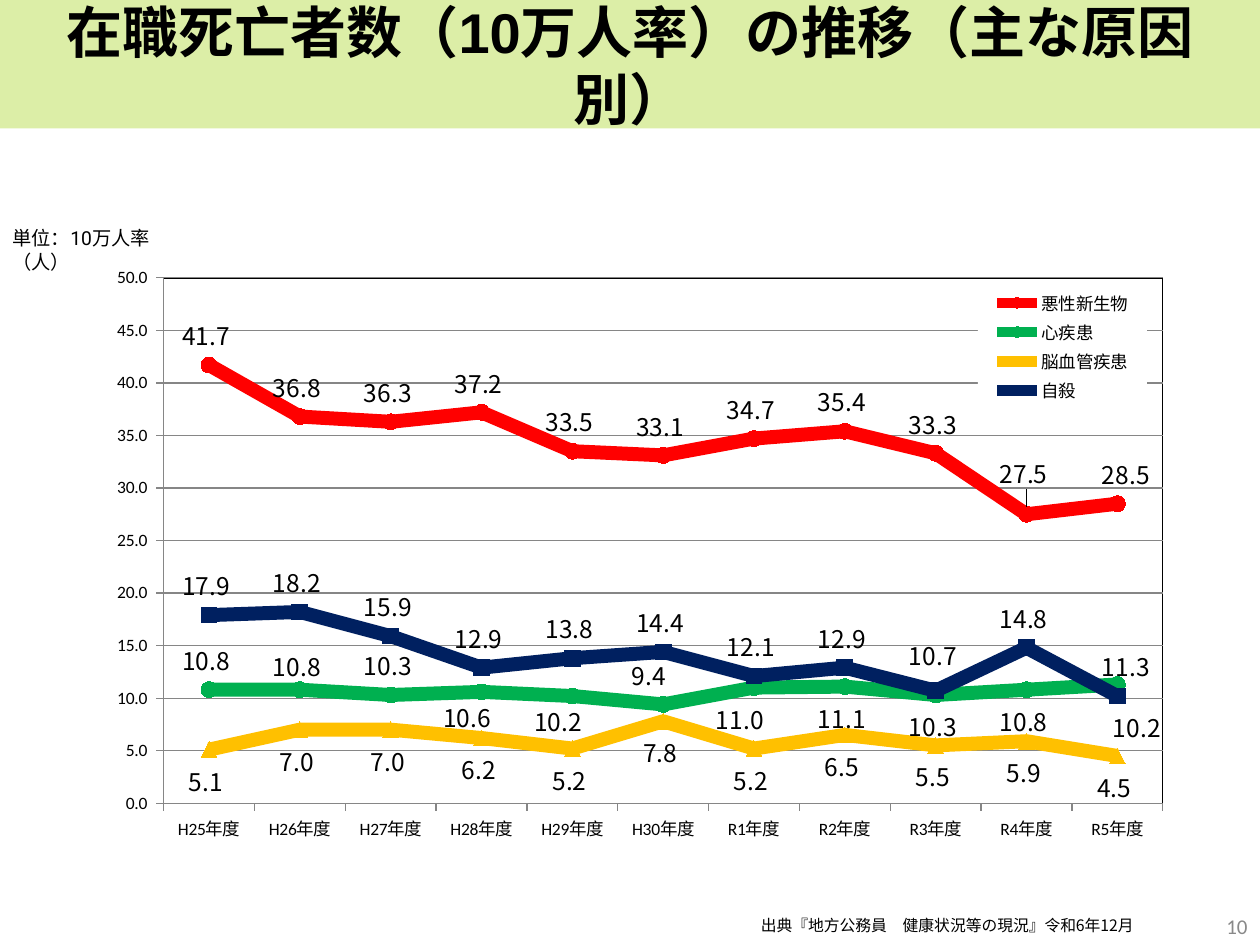
import pptx
import pptx.chart.data
import pptx.dml.color
import pptx.enum.chart
import pptx.enum.shapes
import pptx.enum.text
import pptx.oxml
import pptx.oxml.ns
import pptx.util

POSITION = pptx.enum.chart.XL_LABEL_POSITION
MARKER = pptx.enum.chart.XL_MARKER_STYLE
ALIGN = pptx.enum.text.PP_ALIGN
ANCHOR = pptx.enum.text.MSO_ANCHOR
ABOVE, BELOW = POSITION.ABOVE, POSITION.BELOW
NAMESPACES = pptx.oxml.ns.nsdecls("c", "a")

# Content
TITLE = "在職死亡者数（10万人率）の推移（主な原因別）"
UNIT = "単位：10万人率（人）"
SOURCE = "出典『地方公務員　健康状況等の現況』令和6年12月"
PAGE = "10"
YEARS = [f"H{year}年度" for year in range(25, 31)] + [f"R{year}年度" for year in range(1, 6)]
NUMBER_FORMAT = r"0.0_);[Red]\(0.0\)"
LABEL_FONT = "Noto Sans CJK JP"
GREY = "868686"

# Moved labels: point -> (position, shift x, shift y) as shares of the chart
SERIES = [
    {"name": "悪性新生物", "color": "FF0000", "marker": MARKER.CIRCLE, "position": ABOVE,
     "values": [41.7, 36.8, 36.3, 37.2, 33.5, 33.1, 34.7, 35.4, 33.3, 27.5, 28.5],
     "moved": {9: (ABOVE, 0, -0.02), 10: (ABOVE, 0.01, 0)}},
    {"name": "心疾患", "color": "00B050", "marker": MARKER.CIRCLE, "position": BELOW,
     "values": [10.8, 10.8, 10.3, 10.6, 10.2, 9.4, 11.0, 11.1, 10.3, 10.8, 11.3],
     "moved": {0: (ABOVE, 0, 0), 1: (ABOVE, 0, 0.01), 2: (ABOVE, 0, 0),
               3: (BELOW, -0.01, -0.01), 4: (BELOW, -0.01, -0.01), 5: (ABOVE, -0.01, 0),
               6: (BELOW, -0.01, 0), 7: (BELOW, 0, 0), 10: (ABOVE, 0.01, 0.02)}},
    {"name": "脳血管疾患", "color": "FFC000", "marker": MARKER.TRIANGLE, "position": BELOW,
     "values": [5.1, 7.0, 7.0, 6.2, 5.2, 7.8, 5.2, 6.5, 5.5, 5.9, 4.5], "moved": {}},
    {"name": "自殺", "color": "002060", "marker": MARKER.SQUARE, "position": ABOVE,
     "values": [17.9, 18.2, 15.9, 12.9, 13.8, 14.4, 12.1, 12.9, 10.7, 14.8, 10.2],
     "moved": {8: (ABOVE, 0, -0.01), 10: (BELOW, 0.02, 0)}},
]


def color(value):
    return pptx.dml.color.RGBColor.from_string(value)


def set_font(font, name, size, value="000000"):
    font.name = name
    font.size = pptx.util.Pt(size)
    font.color.rgb = color(value)


def set_line(line, value, width):
    line.color.rgb = color(value)
    line.width = pptx.util.Pt(width)


def write(shape, text, name, size, value="000000", align=ALIGN.LEFT, anchor=ANCHOR.MIDDLE, bold=False):
    frame = shape.text_frame
    frame.word_wrap = True
    frame.vertical_anchor = anchor
    paragraph = frame.paragraphs[0]
    paragraph.alignment = align
    run = paragraph.add_run()
    run.text = text
    set_font(run.font, name, size, value)
    run.font.bold = bold


def set_layout(element, index, **parts):
    """Place a chart part by shares of the chart's size."""
    for old in element.findall(pptx.oxml.ns.qn("c:layout")):
        element.remove(old)
    values = "".join(f'<c:{key} val="{value}"/>' for key, value in parts.items())
    element.insert(index, pptx.oxml.parse_xml(
        f"<c:layout {NAMESPACES}><c:manualLayout>{values}</c:manualLayout></c:layout>"))


def shape_properties(content):
    return pptx.oxml.parse_xml(f"<c:spPr {NAMESPACES}>{content}</c:spPr>")


def solid(value):
    return f'<a:solidFill><a:srgbClr val="{value}"/></a:solidFill>'


presentation = pptx.Presentation()
presentation.slide_width = pptx.util.Inches(10)
presentation.slide_height = pptx.util.Inches(7.5)
slide = presentation.slides.add_slide(presentation.slide_layouts[6])


def box(*place):
    return [pptx.util.Inches(length) for length in place]


# Title band
band = slide.shapes.add_shape(pptx.enum.shapes.MSO_SHAPE.RECTANGLE, *box(0, 0, 10, 1.02))
band.shadow.inherit = False
band.fill.solid()
band.fill.fore_color.rgb = color("DCEEA7")
band.line.fill.background()
write(band, TITLE, "Arial", 32, align=ALIGN.CENTER, bold=True)

# Unit, source and page number
write(slide.shapes.add_textbox(*box(0, 1.75, 1.53, 0.29)), UNIT, "Roboto", 11, anchor=ANCHOR.TOP)
write(slide.shapes.add_textbox(*box(5.94, 7.14, 3.3, 0.4)), SOURCE, LABEL_FONT, 9)
write(slide.shapes.add_textbox(*box(7.67, 7.15, 2.33, 0.4)), PAGE, "Calibri", 12, "898989", ALIGN.RIGHT)

# Chart
data = pptx.chart.data.CategoryChartData(number_format=NUMBER_FORMAT)
data.categories = YEARS
for item in SERIES:
    data.add_series(item["name"], item["values"])
chart = slide.shapes.add_chart(pptx.enum.chart.XL_CHART_TYPE.LINE_MARKERS,
                               *box(0.69, 2.04, 8.95, 4.63), data).chart
chart.has_title = False
set_font(chart.font, "Calibri", 10)
plot = chart.plots[0]
plot.vary_by_categories = False

# Axes
value_axis = chart.value_axis
value_axis.minimum_scale, value_axis.maximum_scale, value_axis.major_unit = 0, 50, 5
value_axis.has_major_gridlines = True
set_line(value_axis.major_gridlines.format.line, GREY, 0.75)
value_axis.tick_labels.number_format = NUMBER_FORMAT
value_axis.tick_labels.number_format_is_linked = False
for axis in (value_axis, chart.category_axis):
    axis.major_tick_mark = pptx.enum.chart.XL_TICK_MARK.OUTSIDE
    set_line(axis.format.line, GREY, 0.75)

# Lines, markers and labels
for series, item in zip(plot.series, SERIES):
    series.smooth = False
    set_line(series.format.line, item["color"], 8)
    marker = series.marker
    marker.style = item["marker"]
    marker.size = 9
    marker.format.fill.solid()
    marker.format.fill.fore_color.rgb = color(item["color"])
    set_line(marker.format.line, item["color"], 0.75)
    labels = series.data_labels
    labels.show_value = True
    labels.position = item["position"]
    labels.number_format = NUMBER_FORMAT
    labels.number_format_is_linked = False
    set_font(labels.font, LABEL_FONT, 14)
    for index, (position, shift_x, shift_y) in item["moved"].items():
        label = series.points[index].data_label
        set_font(label.font, LABEL_FONT, 14)
        label.position = position
        if shift_x or shift_y:
            element = labels._element.xpath(f"c:dLbl[c:idx/@val='{index}']")[0]
            set_layout(element, 1, x=shift_x, y=shift_y)

# Plot frame
plot_area = chart._chartSpace.chart.plotArea
set_layout(plot_area, 0, layoutTarget="inner", xMode="edge", yMode="edge",
           x=0.068, y=0.036, w=0.886, h=0.907)
plot_area.append(shape_properties(f'<a:noFill/><a:ln w="9525">{solid("000000")}</a:ln>'))

# Legend over the plot
chart.has_legend = True
legend = chart.legend
legend.position = pptx.enum.chart.XL_LEGEND_POSITION.RIGHT
legend.include_in_layout = False
set_font(legend.font, "Calibri", 10)
set_layout(legend._element, 1, xMode="edge", yMode="edge", x=0.79, y=0.05, w=0.15, h=0.21)
overlay = legend._element.find(pptx.oxml.ns.qn("c:overlay"))
overlay.addnext(shape_properties(solid("FFFFFF") + "<a:ln><a:noFill/></a:ln>"))

presentation.save("out.pptx")
